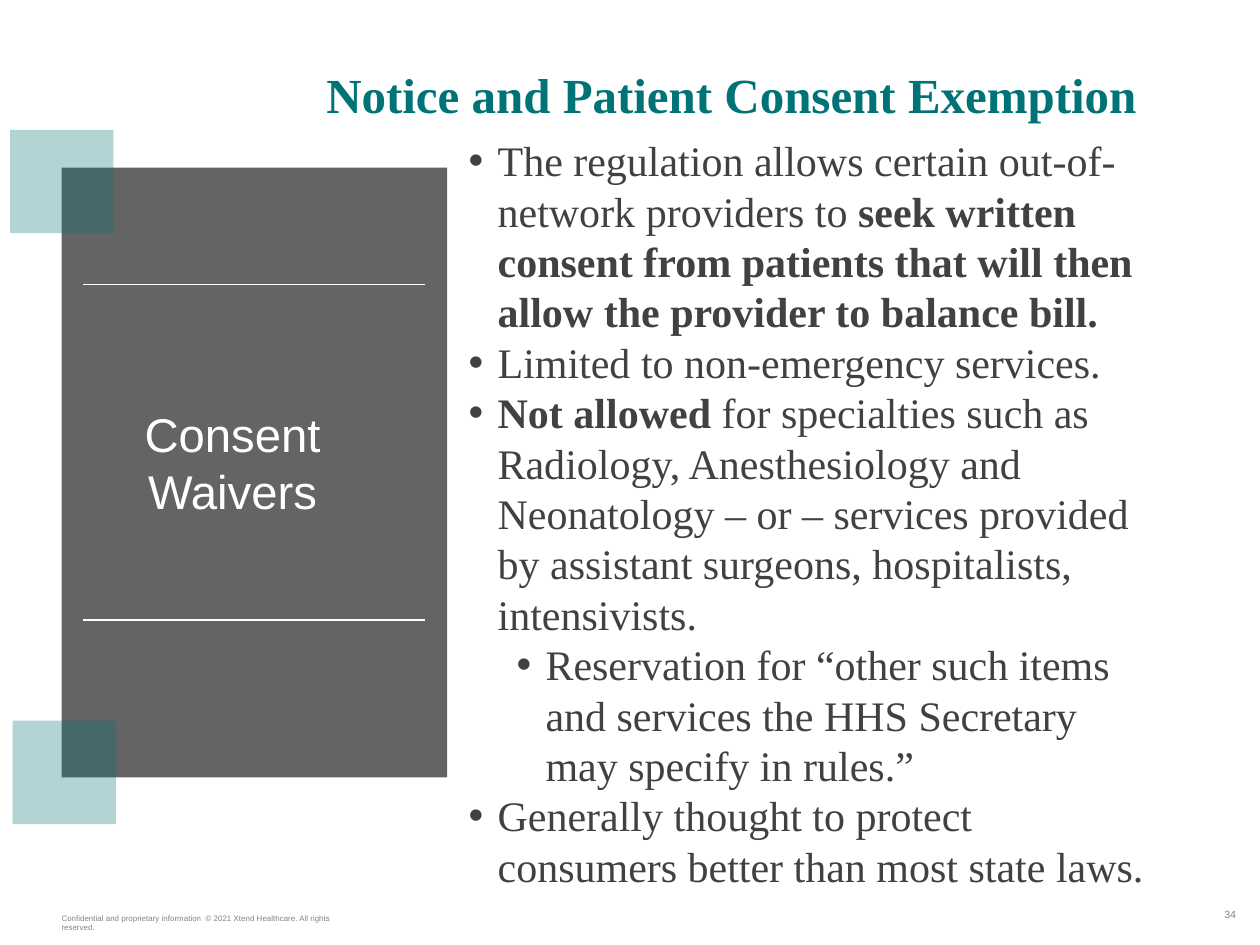
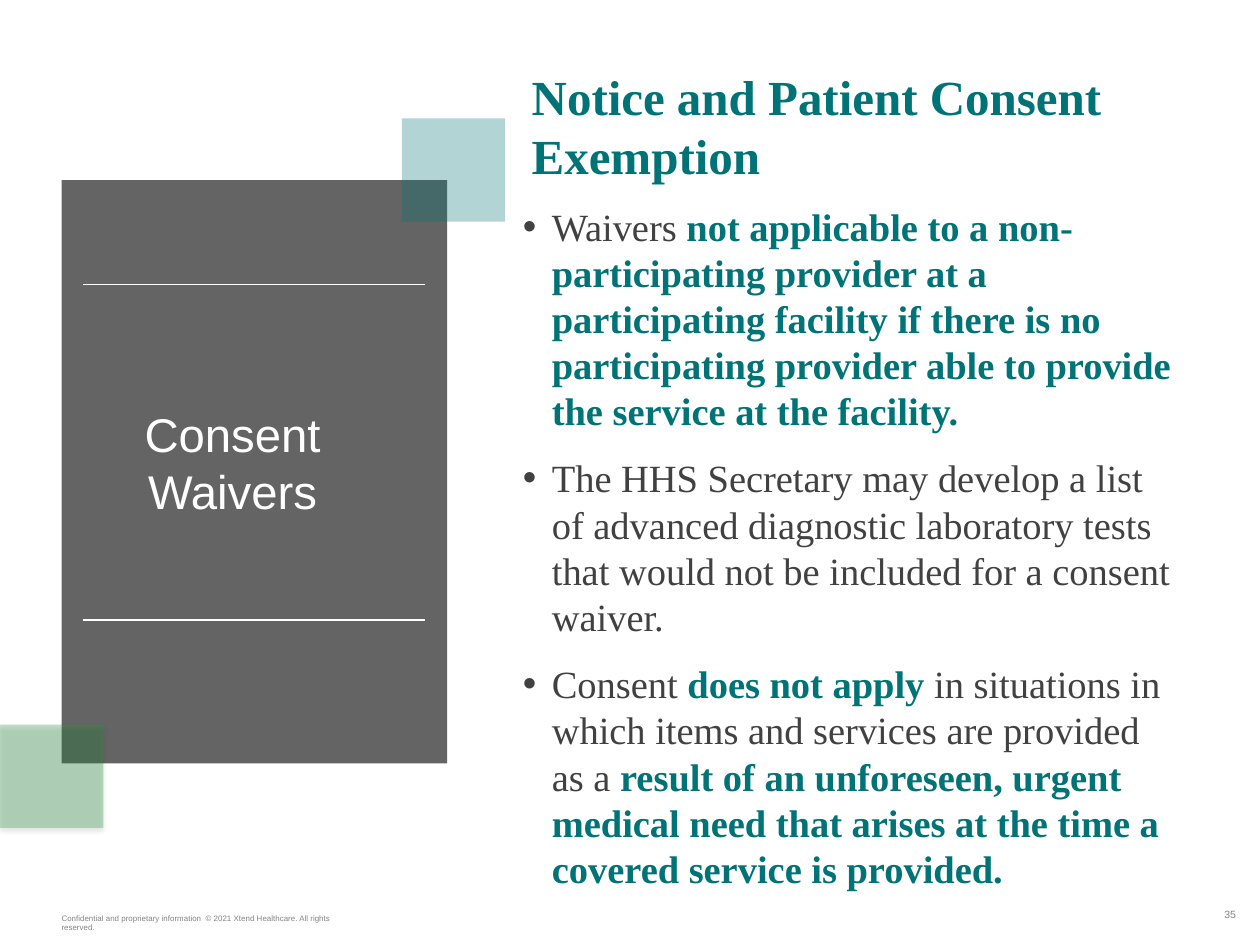
from dataclasses import dataclass

import pptx
import pptx.dml.color
import pptx.enum.shapes
import pptx.enum.text
import pptx.oxml
import pptx.oxml.ns
import pptx.util
from lxml import etree

Inches = pptx.util.Inches
Pt = pptx.util.Pt
qn = pptx.oxml.ns.qn
RGBColor = pptx.dml.color.RGBColor
Align = pptx.enum.text.PP_ALIGN
Anchor = pptx.enum.text.MSO_ANCHOR


@dataclass(frozen=True)
class Theme:
    teal: str = "007377"
    green: str = "2C9942"
    panel: str = "4A4A4A"
    body: str = "414141"
    footer: str = "838383"
    white: str = "FFFFFF"
    serif: str = "Times New Roman"
    sans: str = "Arial"
    title_size: float = 28
    panel_size: float = 27
    number_size: float = 6
    footer_size: float = 4.5


theme = Theme()


def write_text(shape, text, *, place, size, color, font=theme.sans, bold=False,
               emphasis=None, align=Align.LEFT, anchor=Anchor.TOP,
               insets=(0.1, 0.05), bullets=False, gap=0):
    """Fill a shape: one paragraph a line, *bold* parts, a leading > for level two."""
    shape.left, shape.top, shape.width, shape.height = map(Inches, place)
    frame = shape.text_frame
    frame.word_wrap = True
    frame.auto_size = pptx.enum.text.MSO_AUTO_SIZE.NONE
    frame.vertical_anchor = anchor
    frame.margin_left = frame.margin_right = Inches(insets[0])
    frame.margin_top = frame.margin_bottom = Inches(insets[1])
    for index, line in enumerate(text.split("\n")):
        paragraph = frame.add_paragraph() if index else frame.paragraphs[0]
        level = int(line.startswith(">"))
        if bullets:
            properties = paragraph._p.get_or_add_pPr()
            properties.set("marL", str(Inches((0.23, 0.61)[level])))
            properties.set("indent", str(Inches(-0.23)))
            etree.SubElement(properties, qn("a:buFont"), typeface=theme.sans)
            etree.SubElement(properties, qn("a:buChar"), char="•")
        paragraph.level = level
        paragraph.alignment = align
        paragraph.line_spacing = 1.0
        paragraph.space_before = Pt(gap if index else 0)
        paragraph.space_after = Pt(0)
        for part, words in enumerate(line.removeprefix(">").split("*")):
            if words:
                strong = part % 2 == 1
                run = paragraph.add_run()
                run.text = words
                run.font.name = font
                run.font.size = Pt(size)
                run.font.bold = bold or strong
                run.font.color.rgb = RGBColor.from_string(
                    emphasis if strong and emphasis else color)


def add_rectangle(slide, place, color, opacity):
    shape = slide.shapes.add_shape(
        pptx.enum.shapes.MSO_SHAPE.RECTANGLE, *map(Inches, place))
    shape.shadow.inherit = False
    shape.fill.solid()
    shape.fill.fore_color.rgb = RGBColor.from_string(color)
    shape.line.fill.background()
    color_element = shape._element.spPr.find(".//" + qn("a:srgbClr"))
    etree.SubElement(color_element, qn("a:alpha"), val=str(opacity * 1000))
    return shape


# Content of each slide
square = 0.82
pages = [
    dict(
        number="34", title_place=(2.49, 0.46, 6.8, 0.57),
        panel_top=1.33, panel_height=4.84,
        squares=[(0.08, 1.03, theme.teal, False), (0.1, 5.72, theme.teal, False)],
        body_place=(3.72, 1.04, 5.43, 6.06), body_size=24, gap=0, emphasis=theme.body,
        body="The regulation allows certain out-of-network providers to *seek written "
             "consent from patients that will then allow the provider to balance bill.*\n"
             "Limited to non-emergency services.\n"
             "*Not allowed* for specialties such as Radiology, Anesthesiology and "
             "Neonatology – or – services provided by assistant surgeons, hospitalists, "
             "intensivists.\n"
             ">Reservation for “other such items and services the HHS Secretary may "
             "specify in rules.”\n"
             "Generally thought to protect consumers better than most state laws.",
    ),
    dict(
        number="35", title_place=(4.12, 0.48, 5.55, 1.04),
        panel_top=1.43, panel_height=4.63,
        squares=[(3.19, 0.94, theme.teal, False), (0, 5.75, theme.green, True)],
        body_place=(4.15, 1.58, 5.15, 5.52), body_size=22, gap=12, emphasis=theme.teal,
        body="Waivers *not applicable to a non-participating provider at a participating "
             "facility if there is no participating provider able to provide the service "
             "at the facility.*\n"
             "The HHS Secretary may develop a list of advanced diagnostic laboratory tests "
             "that would not be included for a consent waiver.\n"
             "Consent *does not apply *in situations in which items and services are "
             "provided as a *result of an unforeseen, urgent medical need that arises at "
             "the time a covered service is provided.*",
    ),
]

presentation = pptx.Presentation()
presentation.slide_width = Inches(10)
presentation.slide_height = Inches(7.5)

for page in pages:
    slide = presentation.slides.add_slide(presentation.slide_layouts[5])

    # Title
    write_text(slide.shapes.title, "Notice and Patient Consent Exemption",
               place=page["title_place"], size=theme.title_size, color=theme.teal,
               font=theme.serif, bold=True)

    # Grey panel with its two rules
    add_rectangle(slide, (0.49, page["panel_top"], 3.06, page["panel_height"]),
                  theme.panel, 85)
    for rule_top in (2.26, 4.92):
        rule = slide.shapes.add_connector(
            pptx.enum.shapes.MSO_CONNECTOR.STRAIGHT,
            Inches(0.66), Inches(rule_top), Inches(3.37), Inches(rule_top))
        rule.line.color.rgb = RGBColor.from_string(theme.white)
        rule.line.width = Pt(0.75)
        etree.SubElement(rule._element.spPr, qn("a:effectLst"))

    # Translucent corner squares
    for left, top, color, shadowed in page["squares"]:
        corner = add_rectangle(slide, (left, top, square, square), color, 30)
        if shadowed:
            effects = corner._element.spPr.find(qn("a:effectLst"))
            shadow = etree.SubElement(
                effects, qn("a:outerShdw"), blurRad=str(Pt(3.1)), dist=str(Pt(1.8)),
                dir="5400000", rotWithShape="0")
            shadow_color = etree.SubElement(shadow, qn("a:srgbClr"), val="000000")
            etree.SubElement(shadow_color, qn("a:alpha"), val="35000")

    # Body, panel label and footer
    texts = [
        (page["body"], dict(
            place=page["body_place"], size=page["body_size"], color=theme.body,
            font=theme.serif, emphasis=page["emphasis"], anchor=Anchor.MIDDLE,
            insets=(0, 0), bullets=True, gap=page["gap"])),
        ("Consent Waivers", dict(
            place=(0.49, 3.17, 2.71, 1.01), size=theme.panel_size,
            color=theme.white, align=Align.CENTER)),
        ("Confidential and proprietary information  © 2021 Xtend Healthcare. "
         "All rights reserved.", dict(
            place=(0.39, 7.2, 2.57, 0.25), size=theme.footer_size, color=theme.footer)),
        (page["number"], dict(
            place=(9.24, 7.16, 0.57, 0.27), size=theme.number_size,
            color=theme.footer, align=Align.RIGHT, insets=(0, 0.05))),
    ]
    for text, text_format in texts:
        write_text(slide.shapes.add_textbox(0, 0, 0, 0), text, **text_format)

presentation.save("out.pptx")
